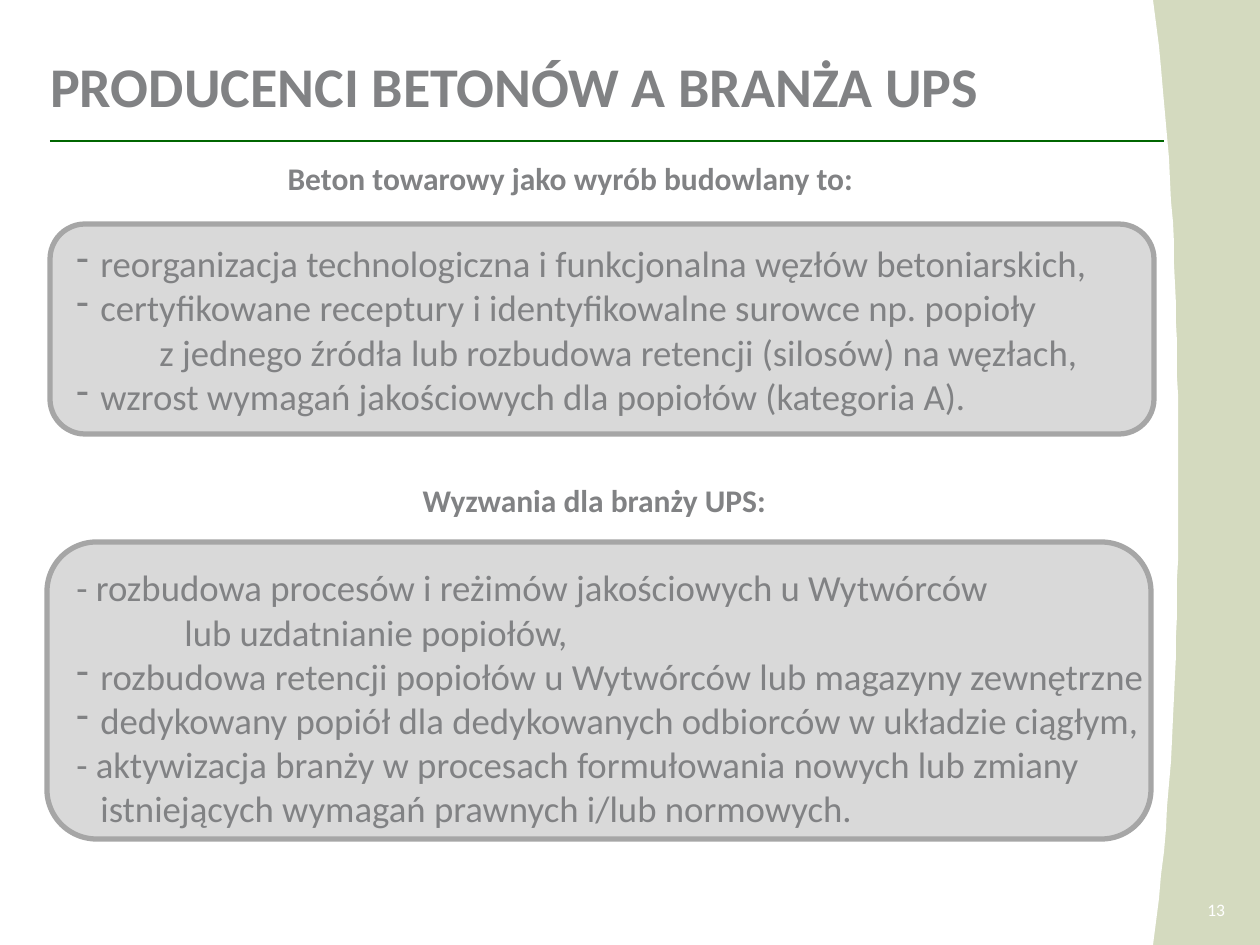
from dataclasses import dataclass

from lxml.etree import SubElement
from pptx import Presentation
from pptx.dml.color import RGBColor
from pptx.enum.shapes import MSO_CONNECTOR, MSO_SHAPE
from pptx.enum.text import MSO_ANCHOR, MSO_AUTO_SIZE, PP_ALIGN
from pptx.oxml.ns import qn
from pptx.util import Emu, Pt

EMU_PER_PX = 914400 / 126


@dataclass(frozen=True)
class Theme:
    """Colours, font and type sizes."""
    font: str = "Calibri"
    text: str = "818284"
    band: str = "D4DABF"
    page: str = "FFFFFF"
    rule: str = "006600"
    panel: str = "D9D9D9"
    border: str = "A6A6A6"
    title: int = 32
    heading: int = 18
    body: int = 21
    number: int = 10


def px(n):
    """Turn px into EMU."""
    return Emu(round(n * EMU_PER_PX))


def rgb(value):
    """Turn a hex string into a colour."""
    return RGBColor.from_string(value)


def bezier(p0, p1, p2, p3, steps=24):
    """Sample a cubic curve, leaving out its start point."""
    points = []
    for i in range(1, steps + 1):
        t = i / steps
        weights = ((1 - t) ** 3, 3 * t * (1 - t) ** 2, 3 * t * t * (1 - t), t ** 3)
        points.append(tuple(sum(w * p[k] for w, p in zip(weights, (p0, p1, p2, p3)))
                            for k in (0, 1)))
    return points


class Deck:
    """Holds the theme and the current slide."""

    def __init__(self, s, theme):
        """Store the slide and paint its background."""
        self.s, self.theme = s, theme
        fill = s.background.fill
        fill.solid()
        fill.fore_color.rgb = rgb(theme.band)

    def paint(self, sp, fill, line=None, width=0):
        """Set fill, outline and no shadow."""
        sp.shadow.inherit = False
        sp.fill.solid()
        sp.fill.fore_color.rgb = rgb(fill)
        if line:
            sp.line.color.rgb = rgb(line)
            sp.line.width = Pt(width)
        else:
            sp.line.fill.background()

    def outline(self, points, fill):
        """Draw a closed outline through points."""
        builder = self.s.shapes.build_freeform(*points[0], scale=EMU_PER_PX)
        builder.add_line_segments(points[1:], close=True)
        self.paint(builder.convert_to_shape(), fill)

    def rule(self, x1, x2, y):
        """Draw a horizontal line."""
        line = self.s.shapes.add_connector(
            MSO_CONNECTOR.STRAIGHT, px(x1), px(y), px(x2), px(y))
        line.line.color.rgb = rgb(self.theme.rule)
        line.line.width = Pt(1)
        SubElement(line._element.spPr, qn("a:effectLst"))

    def panel(self, x, y, w, h):
        """Draw a rounded panel."""
        sp = self.s.shapes.add_shape(
            MSO_SHAPE.ROUNDED_RECTANGLE, px(x), px(y), px(w), px(h))
        self.paint(sp, self.theme.panel, self.theme.border, 3)

    def add_text(self, p, text, size, color=None, bold=False, align=PP_ALIGN.LEFT):
        """Fill and format one paragraph."""
        r = p.add_run()
        r.text = text
        p.alignment = align
        r.font.color.rgb = rgb(color or self.theme.text)
        values = {"name": self.theme.font, "size": Pt(size), "bold": bold}
        for name, value in values.items():
            setattr(r.font, name, value)

    def frame(self, sp, inset=True, wrap=True):
        """Set up a text frame and return it."""
        tf = sp.text_frame
        values = {"word_wrap": wrap, "auto_size": MSO_AUTO_SIZE.NONE,
                  "vertical_anchor": MSO_ANCHOR.TOP}
        if not inset:
            values.update(dict.fromkeys(
                ("margin_left", "margin_top", "margin_right", "margin_bottom"), 0))
        for name, value in values.items():
            setattr(tf, name, value)
        return tf

    def title(self, text, x, y, w, h):
        """Place the title in front of the page shape."""
        sp = self.s.shapes.title
        for name, value in zip(("left", "top", "width", "height"), (x, y, w, h)):
            setattr(sp, name, px(value))
        self.s.shapes._spTree.append(sp._element)
        p = self.frame(sp, inset=False).paragraphs[0]
        p.line_spacing = 0.8
        self.add_text(p, text, self.theme.title, bold=True)

    def label(self, text, x, y, w, h, inset=True, wrap=True, **style):
        """Add a one-line text box."""
        sp = self.s.shapes.add_textbox(px(x), px(y), px(w), px(h))
        self.add_text(self.frame(sp, inset, wrap).paragraphs[0], text, **style)

    def bullets(self, items, x, y, w, h):
        """Add a list of (text, left, hanging, bullet) items."""
        tf = self.frame(self.s.shapes.add_textbox(px(x), px(y), px(w), px(h)))
        for i, (text, left, hanging, bullet) in enumerate(items):
            p = tf.add_paragraph() if i else tf.paragraphs[0]
            pPr = p._p.get_or_add_pPr()
            pPr.set("marL", str(px(left)))
            pPr.set("indent", str(-px(hanging)))
            if bullet:
                SubElement(pPr, qn("a:buFontTx"))
                SubElement(pPr, qn("a:buChar"), char="-")
            self.add_text(p, text, self.theme.body)


def dash(text):
    """Make an item with a dash bullet."""
    return text, 24, 24, True


def typed(text):
    """Make a hanging item whose dash is typed."""
    return text, 24, 24, False


def follow(text, left):
    """Make an indented continuation line."""
    return text, left, 0, False


def main():
    """Build and save the slide."""
    prs = Presentation()
    prs.slide_width, prs.slide_height = px(1260), px(945)
    theme = Theme()
    d = Deck(prs.slides.add_slide(prs.slide_layouts[5]), theme)

    top, middle, bottom = (1153, 0), (1178, 469), (1153, 945)
    d.outline([(0, 0), top,
               *bezier(top, (1177, 183), (1178, 364), middle),
               *bezier(middle, (1178, 573), (1178, 759), bottom),
               (0, 945)], theme.page)
    d.rule(50, 1164, 141)
    d.panel(47, 542, 1104, 297)
    d.panel(50, 224, 1104, 210)

    d.title("PRODUCENCI BETONÓW A BRANŻA UPS", 50, 64, 1104, 55)
    heading = {"size": theme.heading, "bold": True, "align": PP_ALIGN.CENTER}
    d.label("Beton towarowy jako wyrób budowlany to:", 180, 153, 781, 50, **heading)
    d.bullets([
        dash("reorganizacja technologiczna i funkcjonalna węzłów betoniarskich,"),
        dash("certyfikowane receptury i identyfikowalne surowce np. popioły"),
        follow("z jednego źródła lub rozbudowa retencji (silosów) na węzłach,", 83),
        dash("wzrost wymagań jakościowych dla popiołów (kategoria A)."),
    ], 64, 235, 1111, 190)
    d.label("Wyzwania dla branży UPS:", 204, 475, 781, 50, **heading)
    d.bullets([
        typed("- rozbudowa procesów i reżimów jakościowych u Wytwórców"),
        follow("lub uzdatnianie popiołów,", 108),
        dash("rozbudowa retencji popiołów u Wytwórców lub magazyny zewnętrzne"),
        dash("dedykowany popiół dla dedykowanych odbiorców w układzie ciągłym,"),
        typed("- aktywizacja branży w procesach formułowania nowych lub zmiany "
              "istniejących wymagań prawnych i/lub normowych."),
    ], 64, 559, 1119, 280)
    d.label("13", 1194, 899, 31, 19, inset=False, wrap=False,
            size=theme.number, color=theme.page, align=PP_ALIGN.RIGHT)
    prs.save("out.pptx")


if __name__ == "__main__":
    main()
